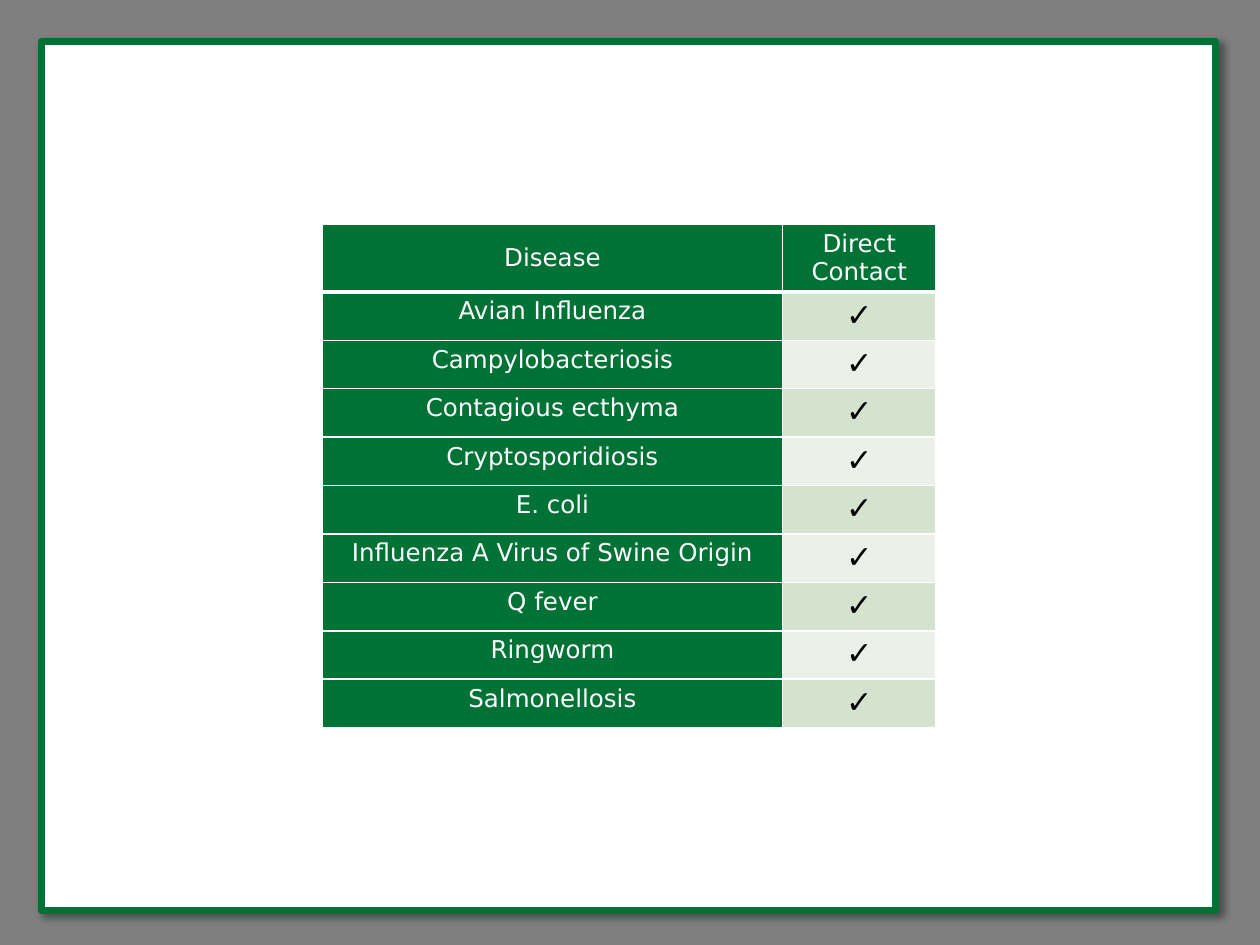
from pptx import Presentation
from pptx.dml.color import RGBColor
from pptx.enum.shapes import MSO_SHAPE as SHAPE
from pptx.enum.text import MSO_ANCHOR as ANCHOR, PP_ALIGN as ALIGN
from pptx.oxml import parse_xml
from pptx.oxml.ns import nsdecls, qn
from pptx.util import Inches, Pt

GREEN = RGBColor(0x00, 0x72, 0x36)
GREY = RGBColor(0x7F, 0x7F, 0x7F)
WHITE = RGBColor(0xFF, 0xFF, 0xFF)
BLACK = RGBColor(0x00, 0x00, 0x00)
BANDS = RGBColor(0xD4, 0xE2, 0xCE), RGBColor(0xEB, 0xF1, 0xE8)

LABEL = {"size": Pt(14), "bold": False, "color": WHITE}
CHECK = {"size": Pt(18), "bold": True, "color": BLACK}
CELL_MARGINS = {
    "margin_left": Inches(0.07), "margin_right": Inches(0.07),
    "margin_top": Inches(0.04), "margin_bottom": Inches(0.04),
}

HEADERS = ["Disease", "Direct Contact"]
DISEASES = [
    "Avian Influenza", "Campylobacteriosis", "Contagious ecthyma",
    "Cryptosporidiosis", "E. coli", "Influenza A Virus of Swine Origin",
    "Q fever", "Ringworm", "Salmonellosis",
]


class SlideBuilder:
    def __init__(self, slide, font):
        self.s = slide
        self.font = font

    def background(self, color):
        fill = self.s.background.fill
        fill.solid()
        fill.fore_color.rgb = color

    def panel(self, left, top, width, height):
        """Add the white framed panel with its soft shadow."""
        sp = self.s.shapes.add_shape(
            SHAPE.RECTANGLE, Inches(left), Inches(top), Inches(width), Inches(height))
        sp.fill.solid()
        sp.fill.fore_color.rgb = WHITE
        sp.line.color.rgb = GREEN
        sp.line.width = Pt(4)
        sp.shadow.inherit = False
        sp._element.spPr.find(qn("a:effectLst")).append(parse_xml(
            f'<a:outerShdw {nsdecls("a")} blurRad="{Pt(4)}" dist="{Pt(3)}" '
            f'dir="{45 * 60000}" algn="tl" rotWithShape="0">'
            '<a:srgbClr val="000000"><a:alpha val="40000"/></a:srgbClr></a:outerShdw>'))

    def borders(self, cell, bottom):
        """Draw white cell borders; bottom is that side's width in points."""
        tc_pr = cell._tc.get_or_add_tcPr()
        widths = {"lnL": 1, "lnR": 1, "lnT": 1, "lnB": bottom}
        for i, (tag, width) in enumerate(widths.items()):
            tc_pr.insert(i, parse_xml(
                f'<a:{tag} {nsdecls("a")} w="{Pt(width)}"><a:solidFill>'
                f'<a:srgbClr val="{WHITE}"/></a:solidFill></a:{tag}>'))

    def cell(self, cell, text, style, fill, anchor=ANCHOR.TOP, bottom=1):
        for name, value in CELL_MARGINS.items():
            setattr(cell, name, value)
        cell.vertical_anchor = anchor
        cell.fill.solid()
        cell.fill.fore_color.rgb = fill
        self.borders(cell, bottom)
        p = cell.text_frame.paragraphs[0]
        p.alignment = ALIGN.CENTER
        r = p.add_run()
        r.text = text
        for name, value in style.items():
            if name == "color":
                r.font.color.rgb = value
            else:
                setattr(r.font, name, value)
        r.font.name = self.font

    def table(self, left, top, widths, height, header_height):
        """Add the table of diseases, each with a check mark."""
        count = len(DISEASES)
        table = self.s.shapes.add_table(
            count + 1, len(widths), Inches(left), Inches(top),
            Inches(sum(widths)), Inches(height)).table
        for column, width in zip(table.columns, widths):
            column.width = Inches(width)
        for row in table.rows:
            row.height = Inches((height - header_height) / count)
        table.rows[0].height = Inches(header_height)

        for col, text in enumerate(HEADERS):
            self.cell(table.cell(0, col), text, LABEL, GREEN, ANCHOR.MIDDLE, bottom=3)
        for i, disease in enumerate(DISEASES):
            self.cell(table.cell(i + 1, 0), disease, LABEL, GREEN)
            self.cell(table.cell(i + 1, 1), "✓", CHECK, BANDS[i % 2])
        for cell in (table.cell(1, col) for col in range(len(widths))):
            cell._tc.tcPr.find(qn("a:lnT")).set("w", str(Pt(3)))


def main():
    prs = Presentation()
    prs.slide_width, prs.slide_height = Inches(10), Inches(7.5)
    builder = SlideBuilder(prs.slides.add_slide(prs.slide_layouts[6]), "DejaVu Sans")
    builder.background(GREY)
    builder.panel(0.33, 0.33, 9.32, 6.9)
    builder.table(2.56, 1.78, [3.65, 1.22], 3.98, header_height=0.52)
    prs.save("out.pptx")


if __name__ == "__main__":
    main()
